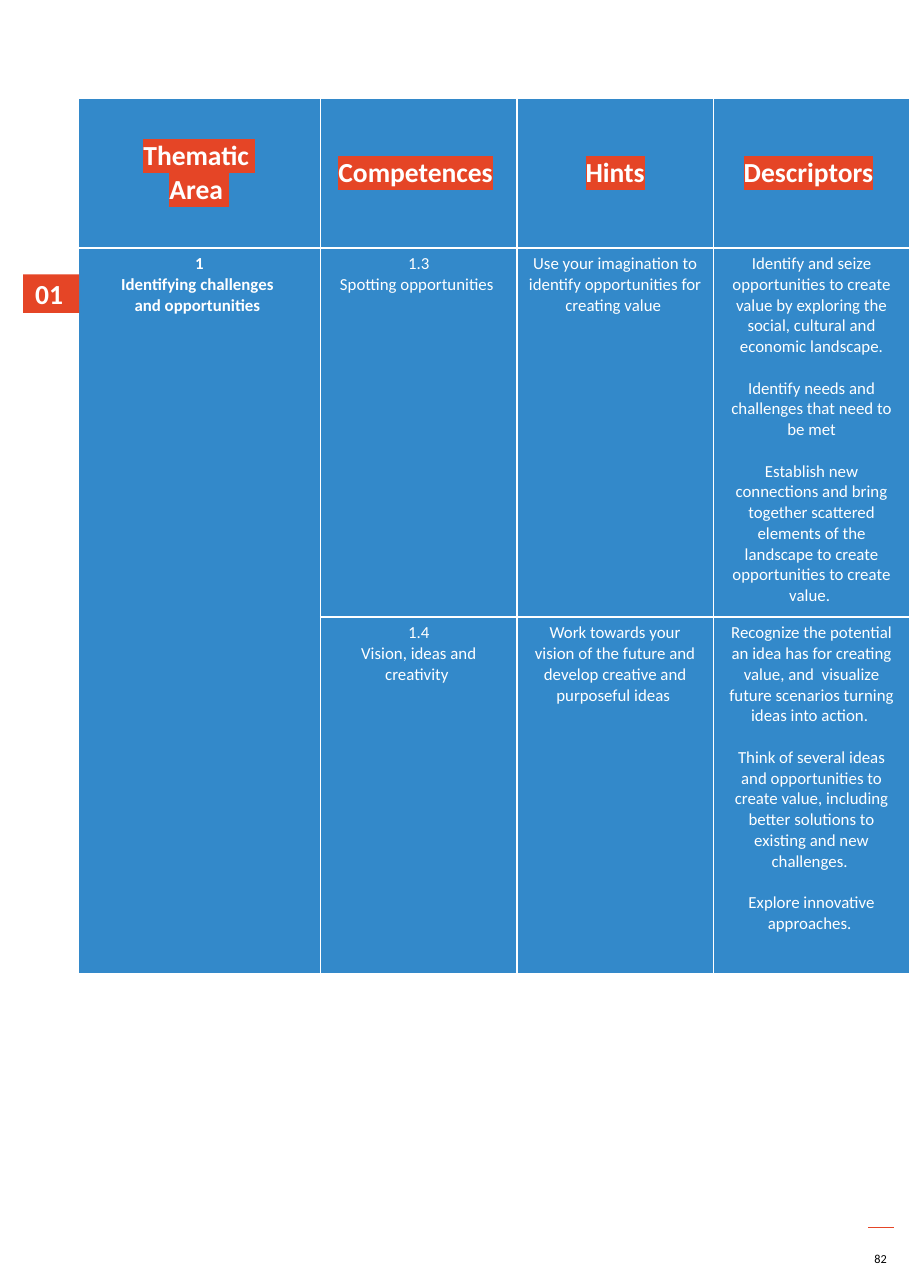
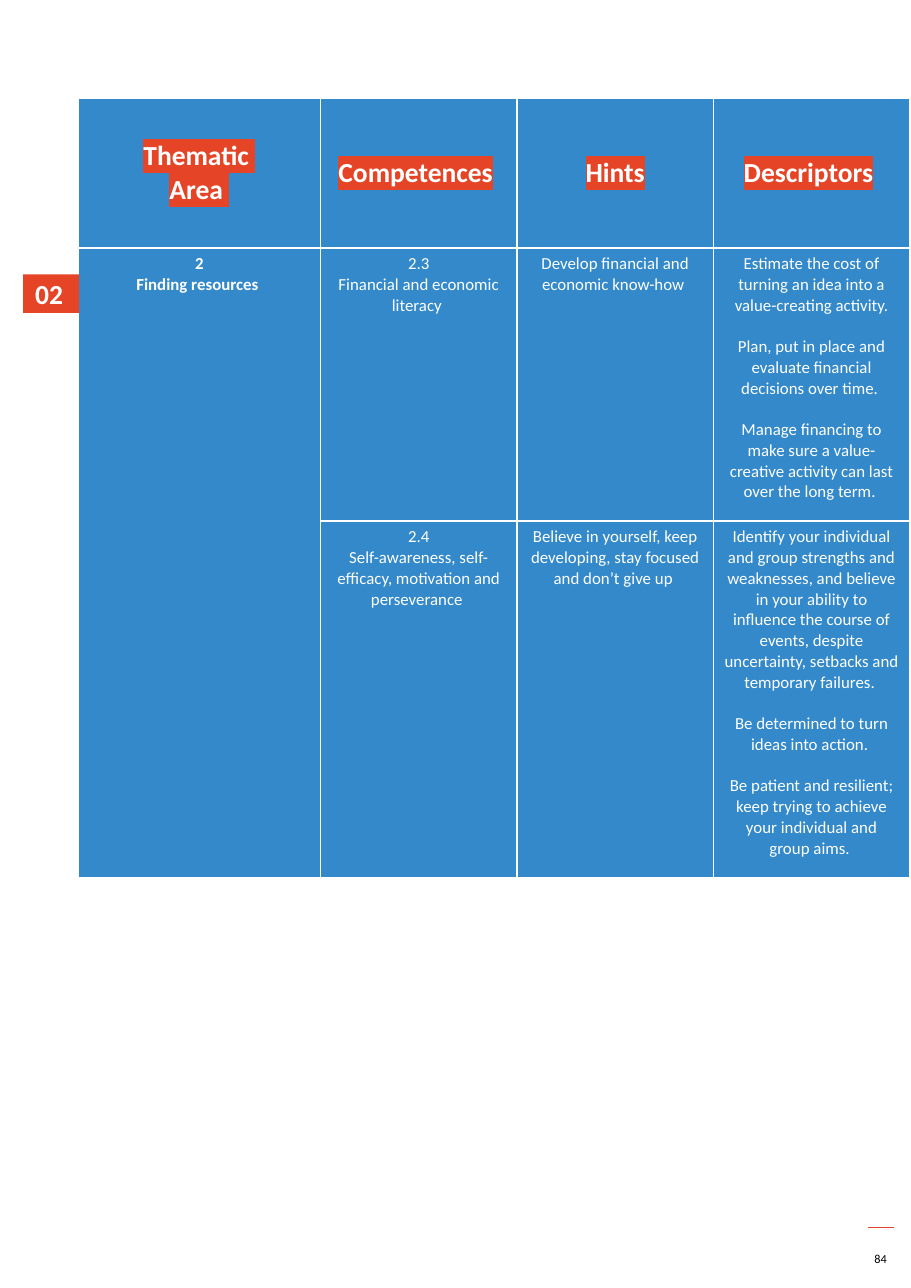
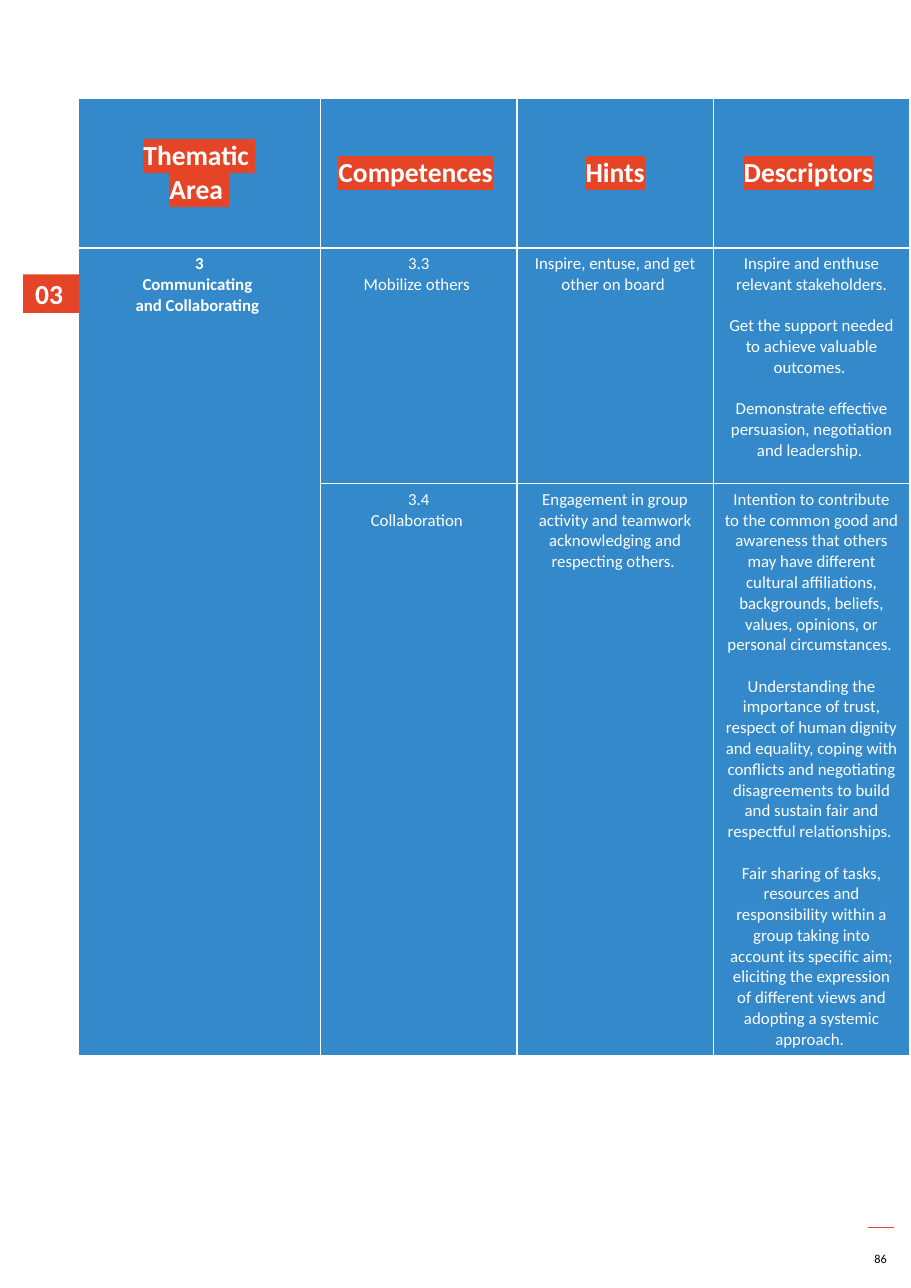
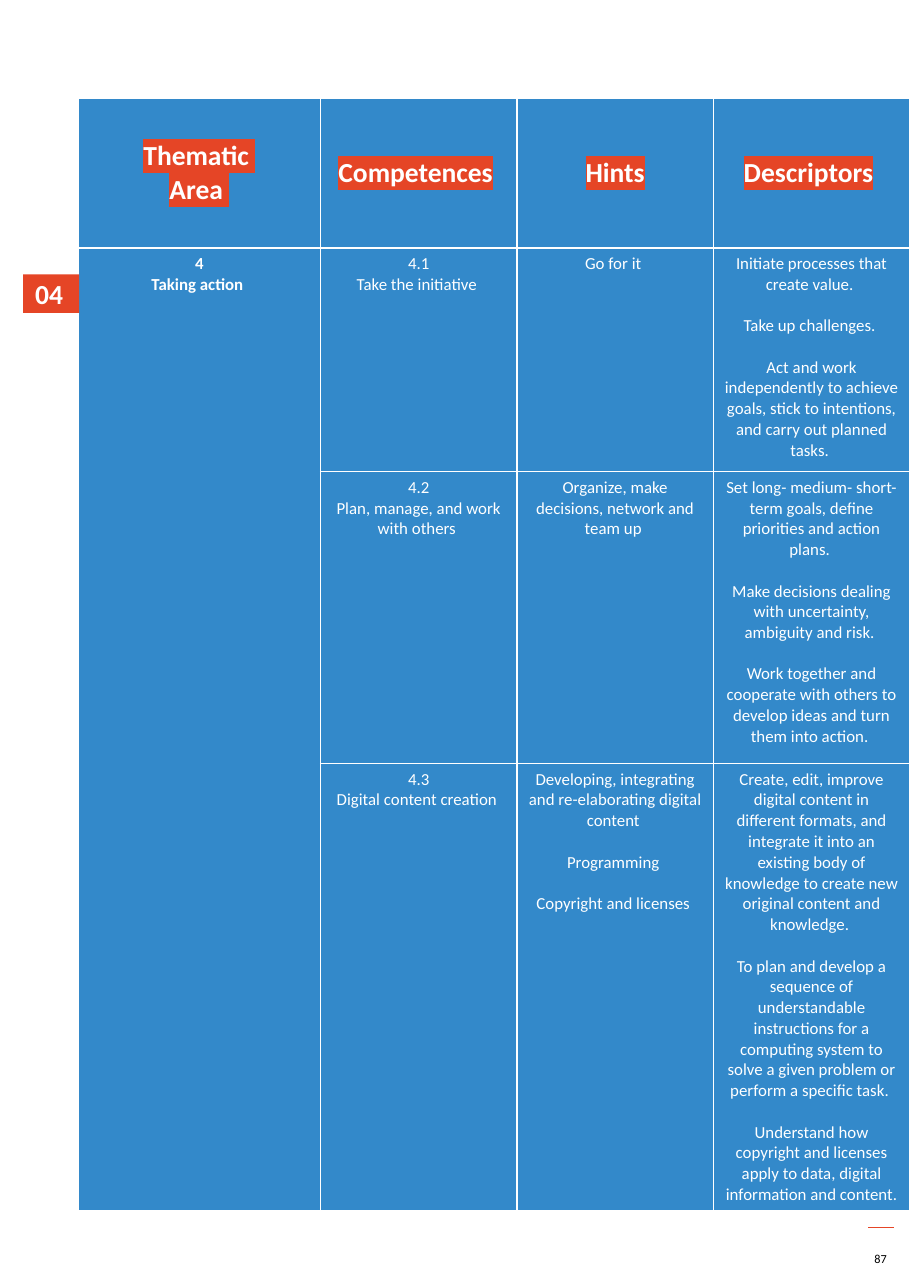
from dataclasses import dataclass

from pptx import Presentation
from pptx.dml.color import RGBColor
from pptx.enum.shapes import MSO_CONNECTOR, MSO_SHAPE
from pptx.enum.text import MSO_ANCHOR, PP_ALIGN
from pptx.oxml.ns import qn
from pptx.oxml.xmlchemy import OxmlElement
from pptx.util import Inches, Pt

BLUE = RGBColor(0x33, 0x89, 0xCA)
RED = RGBColor(0xE5, 0x45, 0x26)
WHITE = RGBColor(0xFF, 0xFF, 0xFF)
BLACK = RGBColor(0x00, 0x00, 0x00)
FONT = "Calibri"
BODY_SIZE = 11
HEADING_SIZE = 18
PARAGRAPH_GAP = Pt(13.5)

TABLE_LEFT, TABLE_TOP, TABLE_WIDTH = 0.71, 0.89, 7.55
THEME_WIDTH = 2.2
HEADER_HEIGHT = 1.36


@dataclass(frozen=True)
class Heading:
    lines: list[str]
    tail: str = ""


@dataclass(frozen=True)
class Competence:
    name: list[str]
    hints: list[str]
    descriptors: list[str]
    height: float


@dataclass(frozen=True)
class Area:
    badge: str
    page: int
    theme: list[str]
    competences: list[Competence]


HEADINGS = [
    Heading(["Thematic ", "Area "]),
    Heading(["Competences"], " "),
    Heading(["Hints"]),
    Heading(["Descriptors"], " "),
]

AREAS = [
    Area("01", 82, ["1", "Identifying challenges ", "and opportunities "], [
        Competence(
            ["1.3", "Spotting opportunities "],
            ["Use your imagination to identify opportunities for creating value "],
            ["Identify and seize opportunities to create value by exploring the "
             "social, cultural and economic landscape.",
             "Identify needs and challenges that need to be met",
             "Establish new connections and bring together scattered elements of the "
             "landscape to create opportunities to create value. "],
            3.35),
        Competence(
            ["1.4", "Vision, ideas and creativity "],
            ["Work towards your vision of the future and develop creative and "
             "purposeful ideas "],
            ["Recognize the potential an idea has for creating value, and  visualize "
             "future scenarios turning ideas into action. ",
             "Think of several ideas and opportunities to create value, including "
             "better solutions to existing and new challenges. ",
             "Explore innovative approaches. "],
            3.24),
    ]),
    Area("02", 84, ["2", "Finding resources "], [
        Competence(
            ["2.3", "Financial and economic literacy "],
            ["Develop financial and economic know-how "],
            ["Estimate the cost of turning an idea into a value-creating activity.",
             "Plan, put in place and evaluate financial decisions over time. ",
             "Manage financing to make sure a value-creative activity can last over "
             "the long term. "],
            2.48),
        Competence(
            ["2.4", "Self-awareness, self-efficacy, motivation and perseverance "],
            ["Believe in yourself, keep developing, stay focused and don’t give up "],
            ["Identify your individual and group strengths and weaknesses, and believe "
             "in your ability to influence the course of events, despite uncertainty, "
             "setbacks and temporary failures. ",
             "Be determined to turn ideas into action. ",
             "Be patient and resilient; keep trying to achieve your individual and "
             "group aims. "],
            3.24),
    ]),
    Area("03", 86, ["3", "Communicating ", "and Collaborating "], [
        Competence(
            ["3.3", "Mobilize others "],
            ["Inspire, entuse, and get other on board "],
            ["Inspire and enthuse relevant stakeholders.",
             "Get the support needed to achieve valuable outcomes. ",
             "Demonstrate effective persuasion, negotiation and leadership. "],
            2.14),
        Competence(
            ["3.4", "Collaboration "],
            ["Engagement in group activity and teamwork acknowledging and respecting "
             "others. "],
            ["Intention to contribute to the common good and awareness that others may "
             "have different cultural affiliations, backgrounds, beliefs, values, "
             "opinions, or personal circumstances. ",
             "Understanding the importance of trust, respect of human dignity and "
             "equality, coping with conflicts and negotiating disagreements to build "
             "and sustain fair and respectful relationships. ",
             "Fair sharing of tasks, resources and responsibility within a group taking "
             "into account its specific aim; eliciting the expression of different "
             "views and adopting a systemic approach. "],
            5.19),
    ]),
    Area("04", 87, ["4", "Taking action "], [
        Competence(
            ["4.1", "Take the initiative "],
            ["Go for it "],
            ["Initiate processes that create value. ",
             "Take up challenges. ",
             "Act and work independently to achieve goals, stick to intentions, and "
             "carry out planned tasks. "],
            2.03),
        Competence(
            ["4.2", "Plan, manage, and work with others "],
            ["Organize, make decisions, network and team up "],
            ["Set long- medium- short-term goals, define priorities and action plans. ",
             "Make decisions dealing with uncertainty, ambiguity and risk. ",
             "Work together and cooperate with others to develop ideas and turn them "
             "into action. "],
            2.65),
        Competence(
            ["4.3", "Digital content creation "],
            ["Developing, integrating and re-elaborating digital content ",
             "Programming ",
             "Copyright and licenses "],
            ["Create, edit, improve digital content in different formats, and integrate "
             "it into an existing body of knowledge to create new original content and "
             "knowledge. ",
             "To plan and develop a sequence of understandable instructions for a "
             "computing system to solve a given problem or perform a specific task. ",
             "Understand how copyright and licenses apply to data, digital information "
             "and content. "],
            4.06),
    ]),
]


def style_run(r, size: float, color: RGBColor = WHITE, bold: bool = False) -> None:
    r.font.size = Pt(size)
    r.font.bold = bold
    r.font.color.rgb = color
    r.font.name = FONT


def highlight(r, color: RGBColor) -> None:
    """Mark a run that already has its font colour."""
    mark = OxmlElement("a:highlight")
    rgb = OxmlElement("a:srgbClr")
    rgb.set("val", str(color))
    mark.append(rgb)
    r._r.get_or_add_rPr().find(qn("a:solidFill")).addnext(mark)


def write_lines(tf, lines: list[str], size: float, color: RGBColor = WHITE,
                bold: bool = False, spaced: bool = False) -> None:
    """Write one centred paragraph a line; spaced leaves a line's gap between them."""
    tf.text = "\n".join(lines)
    for i, p in enumerate(tf.paragraphs):
        p.alignment = PP_ALIGN.CENTER
        if spaced and i:
            p.space_before = PARAGRAPH_GAP
        for r in p.runs:
            style_run(r, size, color, bold)


def format_cell(cell, sides: str = "LRTB") -> None:
    """Give a cell the blue fill and white borders on the named sides."""
    tcPr = cell._tc.get_or_add_tcPr()
    for side in sides:
        ln = OxmlElement(f"a:ln{side}")
        ln.set("w", str(Pt(1)))
        fill = OxmlElement("a:solidFill")
        rgb = OxmlElement("a:srgbClr")
        rgb.set("val", str(WHITE))
        fill.append(rgb)
        ln.append(fill)
        tcPr.append(ln)
    cell.fill.solid()
    cell.fill.fore_color.rgb = BLUE


def write_heading(cell, heading: Heading) -> None:
    format_cell(cell)
    cell.vertical_anchor = MSO_ANCHOR.MIDDLE
    tf = cell.text_frame
    write_lines(tf, heading.lines, HEADING_SIZE, bold=True)
    for p in tf.paragraphs:
        highlight(p.runs[0], RED)
    if heading.tail:
        r = tf.paragraphs[-1].add_run()
        r.text = heading.tail
        style_run(r, HEADING_SIZE, bold=True)


def add_competence_table(s, area: Area) -> None:
    heights = [HEADER_HEIGHT] + [c.height for c in area.competences]
    table = s.shapes.add_table(
        len(heights), len(HEADINGS), Inches(TABLE_LEFT), Inches(TABLE_TOP),
        Inches(TABLE_WIDTH), Inches(sum(heights))).table
    table.first_row = table.horz_banding = False

    other_width = (TABLE_WIDTH - THEME_WIDTH) / (len(HEADINGS) - 1)
    for i, column in enumerate(table.columns):
        column.width = Inches(other_width if i else THEME_WIDTH)
    for row, height in zip(table.rows, heights):
        row.height = Inches(height)

    for i, heading in enumerate(HEADINGS):
        write_heading(table.cell(0, i), heading)

    theme = table.cell(1, 0)
    theme.merge(table.cell(len(area.competences), 0))
    format_cell(theme, "LRT")
    write_lines(theme.text_frame, area.theme, BODY_SIZE, bold=True)

    for i, c in enumerate(area.competences, start=1):
        for j, lines in enumerate([c.name, c.hints, c.descriptors], start=1):
            cell = table.cell(i, j)
            format_cell(cell)
            write_lines(cell.text_frame, lines, BODY_SIZE, spaced=j > 1)


def add_badge(s, number: str) -> None:
    sp = s.shapes.add_shape(MSO_SHAPE.RECTANGLE, Inches(0.21), Inches(2.49),
                            Inches(0.51), Inches(0.35))
    sp.shadow.inherit = False
    sp.fill.solid()
    sp.fill.fore_color.rgb = RED
    sp.line.fill.background()
    tf = sp.text_frame
    tf.word_wrap = False
    tf.vertical_anchor = MSO_ANCHOR.MIDDLE
    tf.margin_left = Inches(0.11)
    tf.margin_right = tf.margin_top = tf.margin_bottom = 0
    write_lines(tf, [number], HEADING_SIZE, bold=True)
    tf.paragraphs[0].alignment = PP_ALIGN.LEFT


def add_footer(s, page: int) -> None:
    rule = s.shapes.add_connector(MSO_CONNECTOR.STRAIGHT, Inches(7.88), Inches(11.14),
                                  Inches(8.12), Inches(11.14))
    rule.line.color.rgb = RED
    rule.line.width = Pt(0.75)
    rule._element.spPr.append(OxmlElement("a:effectLst"))

    tf = s.shapes.add_textbox(Inches(7.8), Inches(11.28), Inches(0.39),
                              Inches(0.29)).text_frame
    tf.word_wrap = True
    tf.vertical_anchor = MSO_ANCHOR.MIDDLE
    write_lines(tf, [str(page)], 8, BLACK)


def main() -> None:
    prs = Presentation()
    prs.slide_width, prs.slide_height = Inches(8.27), Inches(11.69)
    blank = prs.slide_layouts[6]
    for area in AREAS:
        s = prs.slides.add_slide(blank)
        add_footer(s, area.page)
        add_competence_table(s, area)
        add_badge(s, area.badge)
    prs.save("out.pptx")


if __name__ == "__main__":
    main()
